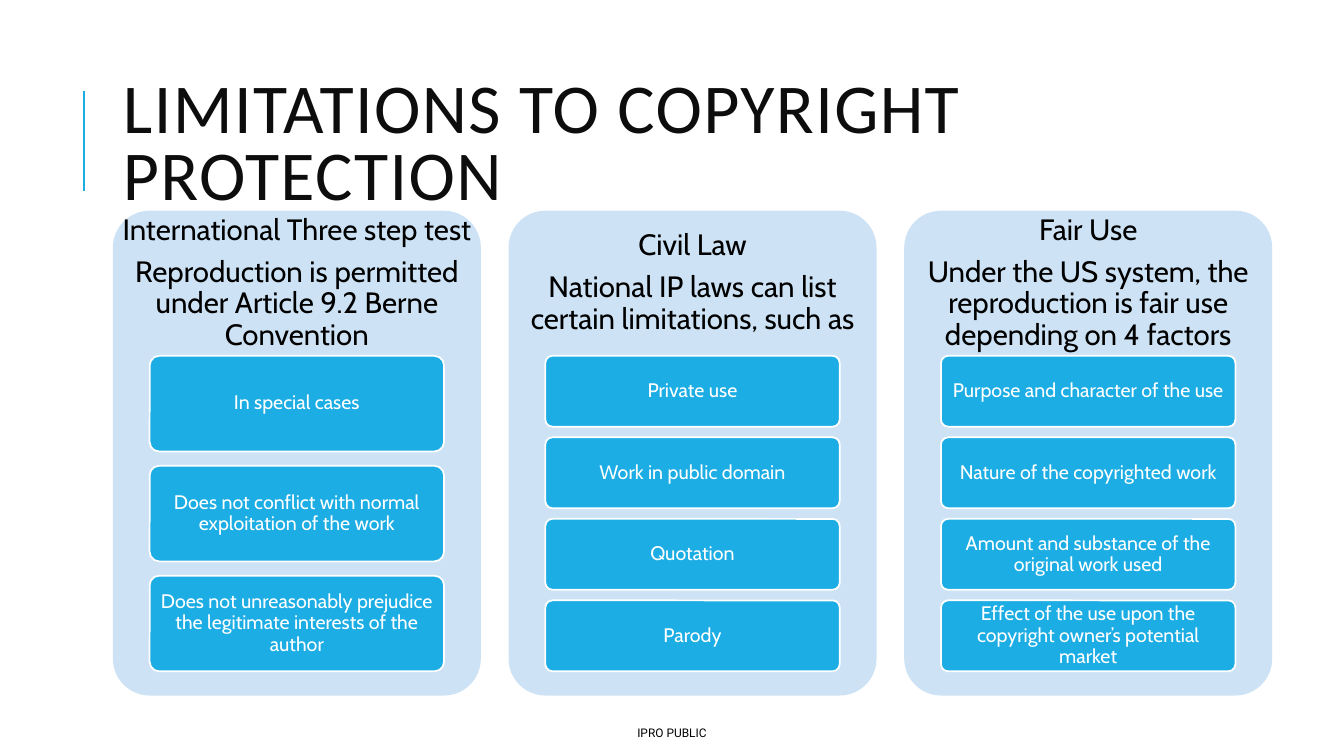
import pptx
import pptx.dml.color
import pptx.enum.shapes
import pptx.enum.text
import pptx.oxml
import pptx.util

SKY, PALE, WHITE, BLACK, INK = "1CADE4", "CDE3F5", "FFFFFF", "000000", "0D0D0D"
CARD_LEFT, CARD_TOP, CARD_WIDTH, CARD_HEIGHT = 8.4, 27.87, 27.38, 64.13
CARD_PITCH = 29.44
HEADING_HEIGHT = 19.2
POINTS_HEIGHT = 41.73
GAP_RATIO = 0.15

CARDS = [
    ("International Three step test",
     "Reproduction is permitted under Article 9.2 Berne Convention",
     ["In special cases",
      "Does not conflict with normal exploitation of the work",
      "Does not unreasonably prejudice the legitimate interests of the author"]),
    ("Civil Law",
     "National IP laws can list certain limitations, such as",
     ["Private use", "Work in public domain", "Quotation", "Parody"]),
    ("Fair Use",
     "Under the US system, the reproduction is fair use depending on 4 factors",
     ["Purpose and character of the use",
      "Nature of the copyrighted work",
      "Amount and substance of the original work used",
      "Effect of the use upon the copyright owner’s potential market"]),
]


def color(value):
    return pptx.dml.color.RGBColor.from_string(value)


class Board:
    """Draws styled elements on one slide, with lengths in percent of its size."""

    def __init__(self, deck):
        self.width, self.height = deck.slide_width, deck.slide_height
        self.slide = deck.slides.add_slide(deck.slide_layouts[5])
        self.shapes = self.slide.shapes

    def place(self, *lengths):
        sides = (self.width, self.height) * 2
        return [round(side * length / 100) for side, length in zip(sides, lengths)]

    def fill_text(self, frame, paragraphs, size, font, ink, inset=(0, 0),
                  spacing=0.9, centred=True):
        frame.word_wrap = True
        frame.auto_size = pptx.enum.text.MSO_AUTO_SIZE.NONE
        frame.vertical_anchor = pptx.enum.text.MSO_ANCHOR.MIDDLE
        frame.margin_left = frame.margin_right = pptx.util.Inches(inset[0])
        frame.margin_top = frame.margin_bottom = pptx.util.Inches(inset[1])
        align = pptx.enum.text.PP_ALIGN
        for index, words in enumerate(paragraphs):
            paragraph = frame.add_paragraph() if index else frame.paragraphs[0]
            paragraph.alignment = align.CENTER if centred else align.LEFT
            paragraph.line_spacing = spacing
            if index < len(paragraphs) - 1:
                paragraph.space_after = pptx.util.Pt(0.35 * size)
            run = paragraph.add_run()
            run.text = words
            run.font.size = pptx.util.Pt(size)
            run.font.name = font
            run.font.color.rgb = color(ink)

    def title(self, words, *area):
        heading = self.shapes.title
        heading.left, heading.top, heading.width, heading.height = self.place(*area)
        self.fill_text(heading.text_frame, [words], 50, "Calibri", INK,
                       inset=(0.1, 0.05), spacing=0.8, centred=False)
        run = heading.text_frame.paragraphs[0].runs[0]
        run.font._element.set("spc", "100")

    def text(self, paragraphs, size, font, *area, inset=(0, 0), spacing=0.9):
        frame = self.shapes.add_textbox(*self.place(*area)).text_frame
        self.fill_text(frame, paragraphs, size, font, BLACK, inset, spacing)

    def panel(self, fill, *area, border=None):
        panel = self.shapes.add_shape(
            pptx.enum.shapes.MSO_SHAPE.ROUNDED_RECTANGLE, *self.place(*area))
        panel.adjustments[0] = 0.1
        panel.shadow.inherit = False
        panel.fill.solid()
        panel.fill.fore_color.rgb = color(fill)
        if border:
            panel.line.color.rgb = color(border)
            panel.line.width = pptx.util.Pt(1.25)
        else:
            panel.line.fill.background()
        return panel

    def point(self, words, *area):
        panel = self.panel(SKY, *area, border=WHITE)
        self.fill_text(panel.text_frame, [words], 14, "Cabin", WHITE,
                       inset=(0.04, 0.03))

    def rule(self, *ends):
        rule = self.shapes.add_connector(
            pptx.enum.shapes.MSO_CONNECTOR.STRAIGHT, *self.place(*ends))
        rule.line.color.rgb = color(SKY)
        rule.line.width = pptx.util.Pt(1.5)
        properties = rule._element.spPr
        properties.append(pptx.oxml.parse_xml(
            '<a:effectLst xmlns:a='
            '"http://schemas.openxmlformats.org/drawingml/2006/main"/>'))

    def card(self, left, heading, summary, points):
        self.panel(PALE, left, CARD_TOP, CARD_WIDTH, CARD_HEIGHT)
        self.text([heading, summary], 21, "Cabin", left, CARD_TOP, CARD_WIDTH,
                  HEADING_HEIGHT, inset=(0.09, 0.09))
        height = POINTS_HEIGHT / (len(points) + GAP_RATIO * (len(points) - 1))
        for index, words in enumerate(points):
            top = CARD_TOP + HEADING_HEIGHT + index * height * (1 + GAP_RATIO)
            self.point(words, left + 0.1 * CARD_WIDTH, top, 0.8 * CARD_WIDTH, height)


def main():
    deck = pptx.Presentation()
    deck.slide_width = pptx.util.Inches(13.33)
    deck.slide_height = pptx.util.Inches(7.5)
    board = Board(deck)
    board.rule(6.23, 25.33, 6.23, 12)
    board.text(["IPRO PUBLIC"], 8.5, "Roboto", 0, 95.33, 100, 3.2, spacing=1.0)
    board.title("LIMITATIONS TO COPYRIGHT PROTECTION", CARD_LEFT, 8.53, 79.74, 21.87)
    for column, content in enumerate(CARDS):
        board.card(CARD_LEFT + column * CARD_PITCH, *content)
    deck.save("out.pptx")


if __name__ == "__main__":
    main()
